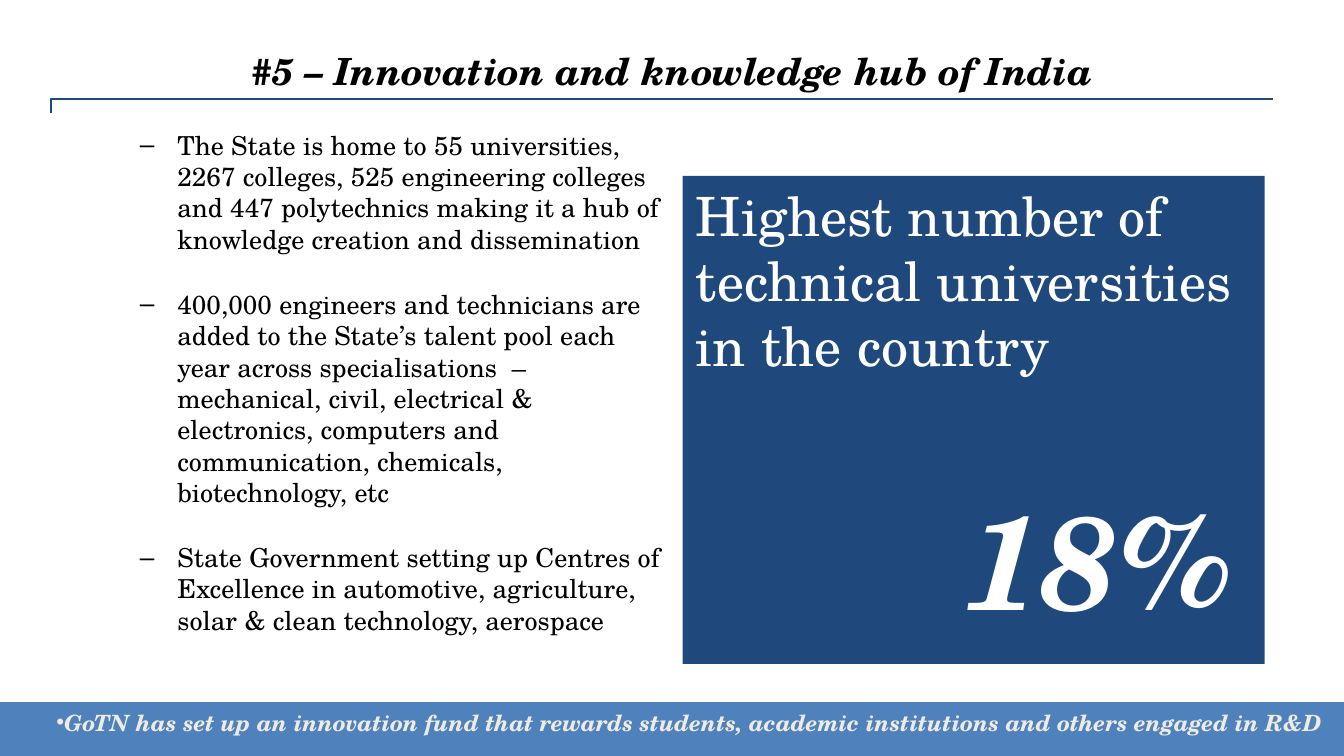
from lxml.etree import SubElement
from pptx import Presentation
from pptx.dml.color import RGBColor
from pptx.enum.shapes import MSO_CONNECTOR as Connector, MSO_SHAPE as Shape
from pptx.enum.text import MSO_ANCHOR as Anchor, MSO_AUTO_SIZE as AutoSize, PP_ALIGN as Align
from pptx.oxml.ns import qn
from pptx.util import Inches, Pt

TITLE = "#5 – Innovation and knowledge hub of India"
POINTS = [
    "The State is home to 55 universities, 2267 colleges, 525 engineering colleges "
    "and 447 polytechnics making it a hub of knowledge creation and dissemination",
    "400,000 engineers and technicians are added to the State’s talent pool each year "
    "across specialisations  – mechanical, civil, electrical & electronics, computers "
    "and communication, chemicals, biotechnology, etc",
    "State Government setting up Centres of Excellence in automotive, agriculture, "
    "solar & clean technology, aerospace",
]
HIGHLIGHT = "Highest number of technical universities in the country"
SHARE = "18%"
FOOTER = "GoTN has set up an innovation fund that rewards students, academic institutions and others engaged in R&D"

FONT, BULLET_FONT = "TeX Gyre Schola", "Arial"
COLORS = {"navy": "1F497D", "blue": "4F81BD", "cream": "EEECE1", "white": "FFFFFF", "black": "000000"}

WIDTH = 10
HEIGHT = WIDTH * 9 / 16
MARGIN = 0.5
MIDDLE = 5.08
CONTENT_BOTTOM = 4.94
BODY_TOP, PANEL_TOP = 0.92, 1.31
FOOTER_HEIGHT = 0.4
RULE_LEFT, RULE_RIGHT, RULE_TOP, RULE_DROP = 0.38, 9.47, 0.74, 0.1
PADDING = (0.1, 0.05, 0.1, 0.05)


def color(name):
    return RGBColor.from_string(COLORS[name])


def box(left, top, width, height):
    return [Inches(n) for n in (left, top, width, height)]


def write(shape, texts, size, ink, align=Align.LEFT, strong=False, padding=PADDING, anchor=Anchor.TOP):
    frame = shape.text_frame
    frame.word_wrap = True
    frame.auto_size = AutoSize.NONE
    frame.vertical_anchor = anchor
    frame.margin_left, frame.margin_top, frame.margin_right, frame.margin_bottom = box(*padding)
    for i, text in enumerate(texts):
        paragraph = frame.add_paragraph() if i else frame.paragraphs[0]
        paragraph.text = text
        paragraph.alignment = align
        font = paragraph.font
        font.name, font.size = FONT, Pt(size)
        font.bold = font.italic = strong
        font.color.rgb = color(ink)
    return frame.paragraphs


def add_bullet(paragraph, mark, left, hanging, before):
    paragraph.space_before = Pt(before)
    properties = paragraph._p.get_or_add_pPr()
    properties.set("marL", str(Inches(left)))
    properties.set("indent", str(Inches(hanging)))
    for tag, attributes in (("a:buFont", {"typeface": BULLET_FONT}), ("a:buChar", {"char": mark})):
        part = properties.makeelement(qn(tag), attributes)
        properties.insert_element_before(part, "a:tabLst", "a:defRPr", "a:extLst")


def add_panel(slide, area, fill):
    panel = slide.shapes.add_shape(Shape.RECTANGLE, *box(*area))
    panel.shadow.inherit = False
    panel.fill.solid()
    panel.fill.fore_color.rgb = color(fill)
    panel.line.fill.background()
    return panel


def add_rule(slide):
    ends = box(RULE_LEFT, RULE_TOP + RULE_DROP, RULE_RIGHT, RULE_TOP)
    rule = slide.shapes.add_connector(Connector.ELBOW, *ends)
    rule.line.color.rgb = color("navy")
    rule.line.width = Pt(1)
    properties = rule.element.spPr
    geometry = properties.find(qn("a:prstGeom"))
    adjustments = geometry.find(qn("a:avLst"))
    if adjustments is None:
        adjustments = SubElement(geometry, qn("a:avLst"))
    SubElement(adjustments, qn("a:gd"), name="adj1", fmla="val 0")
    SubElement(properties, qn("a:effectLst"))


def main():
    deck = Presentation()
    deck.slide_width, deck.slide_height = Inches(WIDTH), Inches(HEIGHT)
    slide = deck.slides.add_slide(deck.slide_layouts[5])
    add_rule(slide)

    title = slide.shapes.title
    title.left, title.top, title.width, title.height = box(MARGIN, 0.23, WIDTH - 2 * MARGIN, 0.94)
    write(title, [TITLE], 20, "black", Align.CENTER, True, (0.1, 0.05, 0.1, 0.4), Anchor.MIDDLE)

    highlight = add_panel(slide, (MIDDLE, PANEL_TOP, 4.33, CONTENT_BOTTOM - PANEL_TOP), "navy")
    write(highlight, [HIGHLIGHT], 29, "white")

    points = slide.shapes.add_textbox(*box(MARGIN, BODY_TOP, MIDDLE - MARGIN, CONTENT_BOTTOM - BODY_TOP))
    for paragraph in write(points, POINTS, 14, "black", padding=(0.09, 0.04, 0.09, 0.04)):
        add_bullet(paragraph, "–", 0.73, -0.28, 18)

    share = slide.shapes.add_textbox(*box(5.25, 3.56, 3.94, 0.94))
    write(share, [SHARE], 71, "white", Align.RIGHT, True, (0, 0, 0, 0))

    footer = add_panel(slide, (0, HEIGHT - FOOTER_HEIGHT, WIDTH, FOOTER_HEIGHT), "blue")
    for paragraph in write(footer, [FOOTER], 12, "cream", Align.JUSTIFY, True, (0.09, 0.05, 0.09, 0.05)):
        add_bullet(paragraph, "•", 0.33, 0, 2.4)

    deck.save("out.pptx")


if __name__ == "__main__":
    main()
